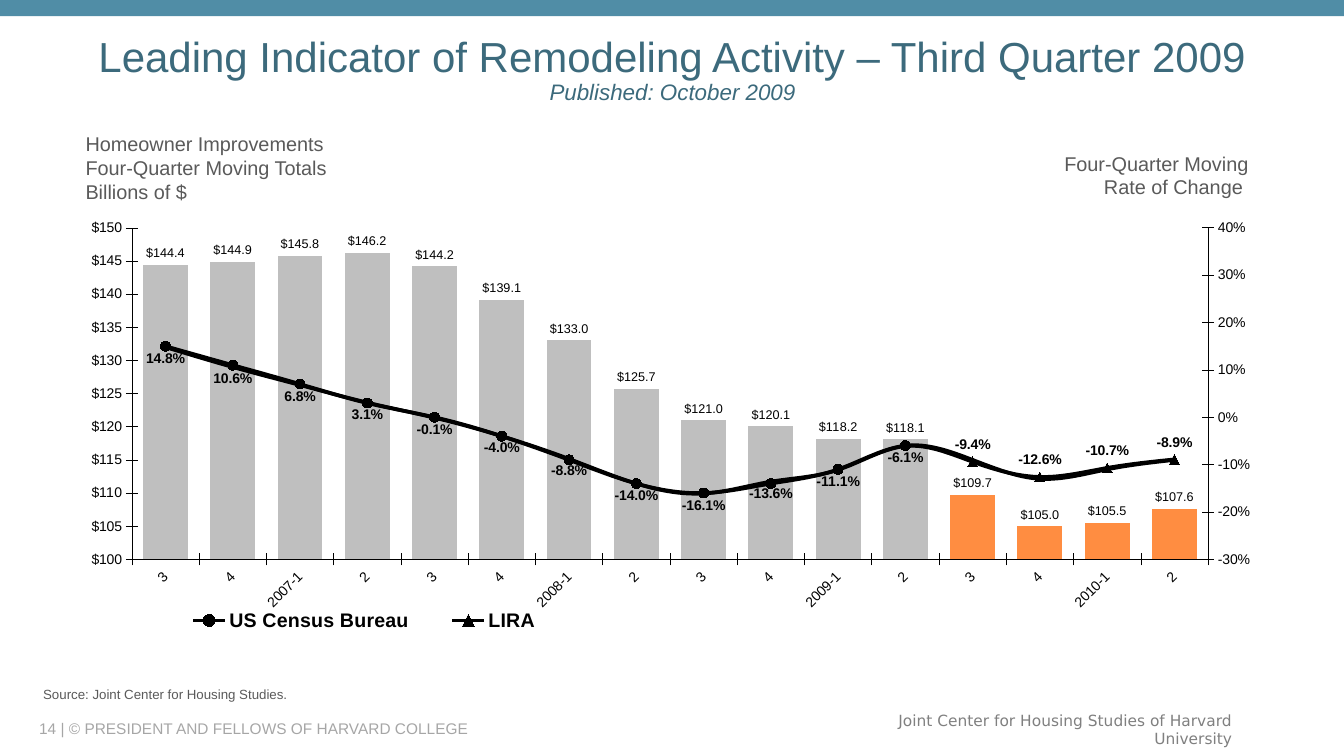
from dataclasses import dataclass

from pptx import Presentation
from pptx.chart.axis import ValueAxis
from pptx.chart.data import CategoryChartData
from pptx.dml.color import RGBColor
from pptx.enum.chart import (XL_CHART_TYPE, XL_LABEL_POSITION, XL_LEGEND_POSITION,
                             XL_MARKER_STYLE, XL_TICK_MARK)
from pptx.enum.shapes import MSO_SHAPE
from pptx.enum.text import MSO_ANCHOR, PP_ALIGN
from pptx.oxml import parse_xml
from pptx.oxml.ns import nsdecls
from pptx.util import Inches, Pt

COLUMNS = XL_CHART_TYPE.COLUMN_CLUSTERED
RECTANGLE = MSO_SHAPE.RECTANGLE
LEGEND_BOTTOM = XL_LEGEND_POSITION.BOTTOM
ABOVE, BELOW = XL_LABEL_POSITION.ABOVE, XL_LABEL_POSITION.BELOW
OUTSIDE = XL_LABEL_POSITION.OUTSIDE_END
CIRCLE, TRIANGLE, NO_MARKER = (XL_MARKER_STYLE.CIRCLE, XL_MARKER_STYLE.TRIANGLE,
                               XL_MARKER_STYLE.NONE)
CROSS, NO_TICK = XL_TICK_MARK.CROSS, XL_TICK_MARK.NONE
LEFT, CENTER, RIGHT = PP_ALIGN.LEFT, PP_ALIGN.CENTER, PP_ALIGN.RIGHT
TOP, MIDDLE = MSO_ANCHOR.TOP, MSO_ANCHOR.MIDDLE

QUARTERS = ["3", "4", "2007-1", "2", "3", "4", "2008-1", "2",
            "3", "4", "2009-1", "2", "3", "4", "2010-1", "2"]
SPENDING = [144.4, 144.9, 145.8, 146.2, 144.2, 139.1, 133.0, 125.7,
            121.0, 120.1, 118.2, 118.1, 109.7, 105.0, 105.5, 107.6]
LIRA_RATES = [0.148, 0.106, 0.068, 0.031, -0.001, -0.04, -0.088, -0.14,
              -0.161, -0.136, -0.111, -0.061, -0.094, -0.126, -0.107, -0.089]
CENSUS_RATES = [round(rate, 2) for rate in LIRA_RATES]
FIRST_FORECAST = 12


@dataclass(frozen=True)
class Theme:
    font: str = "Arial"
    footer_font: str = "DejaVu Sans"
    band: str = "508DA6"
    title: str = "3C6A7C"
    body: str = "5A5A5A"
    copyright: str = "A6A6A6"
    footer: str = "808080"
    ink: str = "000000"
    actual: str = "BFBFBF"
    forecast: str = "FF8D41"
    title_size: float = 30
    subtitle_size: float = 16
    heading_size: float = 14.2
    legend_size: float = 14
    chart_size: float = 13.2
    footer_size: float = 11
    axis_size: float = 10
    source_size: float = 9.5
    bar_label_size: float = 9


def assign(target, values):
    for name, value in values.items():
        setattr(target, name, value)


def manual_layout(x, y, w, h, inner=False):
    target = '<c:layoutTarget val="inner"/>' if inner else ""
    return parse_xml(
        f'<c:layout {nsdecls("c")}><c:manualLayout>{target}'
        '<c:xMode val="edge"/><c:yMode val="edge"/>'
        f'<c:x val="{x}"/><c:y val="{y}"/><c:w val="{w}"/><c:h val="{h}"/>'
        '</c:manualLayout></c:layout>')


class SlideBuilder:
    def __init__(self, slide, theme):
        self.slide = slide
        self.theme = theme

    def style_font(self, font, size, color=None, **extra):
        assign(font, {"name": self.theme.font, "size": Pt(size), **extra})
        font.color.rgb = RGBColor.from_string(color or self.theme.ink)

    def band(self, left, top, width, height):
        band = self.slide.shapes.add_shape(
            RECTANGLE, *map(Inches, (left, top, width, height)))
        band.shadow.inherit = False
        band.fill.solid()
        band.fill.fore_color.rgb = RGBColor.from_string(self.theme.band)
        band.line.fill.background()

    def text(self, place, lines, size, color, align=LEFT, anchor=TOP, **extra):
        frame = self.slide.shapes.add_textbox(*map(Inches, place)).text_frame
        assign(frame, {"word_wrap": True, "vertical_anchor": anchor})
        for index, line in enumerate(lines):
            paragraph = frame.add_paragraph() if index else frame.paragraphs[0]
            paragraph.alignment = align
            run = paragraph.add_run()
            run.text = line
            self.style_font(run.font, size, color, **extra)
        return frame.paragraphs[0]

    def title(self, place, heading, subtitle):
        theme = self.theme
        paragraph = self.text(place, [heading], theme.title_size, theme.title,
                              CENTER, MIDDLE)
        paragraph.line_spacing = 0.9
        paragraph.add_line_break()
        published = paragraph.add_run()
        published.text = subtitle
        self.style_font(published.font, theme.subtitle_size, theme.title, italic=True)

    def chart(self, place):
        data = CategoryChartData()
        data.categories = QUARTERS
        data.add_series("Series 1", SPENDING)
        data.add_series("US Census Bureau", CENSUS_RATES)
        data.add_series("LIRA", LIRA_RATES)
        chart = self.slide.shapes.add_chart(COLUMNS, *map(Inches, place), data).chart
        chart.has_title = False
        self.style_font(chart.font, self.theme.chart_size)
        self.style_axis(chart.category_axis)
        chart.category_axis._element.txPr.bodyPr.set("rot", "-2700000")
        self.style_axis(chart.value_axis, "\\$#,##0", 100, 150, 5)
        rate_axis = self.move_rates_to_right_axis(chart)
        self.style_axis(rate_axis, "0%", -0.3, 0.4, 0.1)
        self.style_columns(chart.plots[0])
        self.style_lines(chart.plots[1])
        self.style_legend(chart)

    def move_rates_to_right_axis(self, chart):
        """Turn the last two series into lines and return their value axis."""
        area = chart._chartSpace.chart.plotArea
        bars = area.find("c:barChart", area.nsmap)
        lines = parse_xml(
            f'<c:lineChart {nsdecls("c")}><c:grouping val="standard"/>'
            '<c:varyColors val="0"/><c:marker val="1"/>'
            '<c:axId val="5001"/><c:axId val="5002"/></c:lineChart>')
        for offset, series in enumerate(bars.xpath("c:ser")[1:]):
            for invert in series.xpath("c:invertIfNegative"):
                series.remove(invert)
            lines.insert(2 + offset, series)
        bars.addnext(lines)
        hidden_quarters = parse_xml(
            f'<c:catAx {nsdecls("c")}><c:axId val="5001"/>'
            '<c:scaling><c:orientation val="minMax"/></c:scaling>'
            '<c:delete val="1"/><c:axPos val="b"/><c:crossAx val="5002"/>'
            '<c:crosses val="autoZero"/></c:catAx>')
        rates = parse_xml(
            f'<c:valAx {nsdecls("c")}><c:axId val="5002"/>'
            '<c:scaling><c:orientation val="minMax"/></c:scaling>'
            '<c:delete val="0"/><c:axPos val="r"/><c:crossAx val="5001"/>'
            '<c:crosses val="max"/></c:valAx>')
        area.xpath("c:valAx")[-1].addnext(hidden_quarters)
        hidden_quarters.addnext(rates)
        for layout in area.xpath("c:layout"):
            area.remove(layout)
        area.insert(0, manual_layout(0.06, 0.06, 0.88, 0.76, inner=True))
        return ValueAxis(rates)

    def style_axis(self, axis, number_format=None, low=None, high=None, step=None):
        assign(axis, {"has_major_gridlines": False, "major_tick_mark": CROSS,
                      "minor_tick_mark": NO_TICK})
        self.style_font(axis.tick_labels.font, self.theme.axis_size)
        axis.format.line.width = Pt(0.33)
        axis.format.line.color.rgb = RGBColor.from_string(self.theme.ink)
        if number_format:
            assign(axis, {"minimum_scale": low, "maximum_scale": high,
                          "major_unit": step})
            assign(axis.tick_labels, {"number_format": number_format,
                                      "number_format_is_linked": False})

    def style_labels(self, labels, number_format, position, size, **extra):
        assign(labels, {"show_value": True, "number_format": number_format,
                        "number_format_is_linked": False, "position": position})
        self.style_font(labels.font, size, **extra)

    def style_columns(self, plot):
        assign(plot, {"gap_width": 50, "vary_by_categories": False})
        spending = plot.series[0]
        fills = [(spending, self.theme.actual)]
        fills += [(spending.points[index], self.theme.forecast)
                  for index in range(FIRST_FORECAST, len(QUARTERS))]
        for part, color in fills:
            part.format.fill.solid()
            part.format.fill.fore_color.rgb = RGBColor.from_string(color)
        self.style_labels(spending.data_labels, "\\$#,##0.0", OUTSIDE,
                          self.theme.bar_label_size)

    def style_lines(self, plot):
        ink = RGBColor.from_string(self.theme.ink)
        actual, forecast = range(FIRST_FORECAST), range(FIRST_FORECAST, len(QUARTERS))
        census, lira = plot.series
        for series, marker, unmarked in ((census, CIRCLE, forecast),
                                         (lira, TRIANGLE, actual)):
            series.smooth = True
            series.format.line.width = Pt(2.64)
            series.format.line.color.rgb = ink
            assign(series.marker, {"style": marker, "size": 7})
            series.marker.format.fill.solid()
            series.marker.format.fill.fore_color.rgb = ink
            series.marker.format.line.color.rgb = ink
            for index in unmarked:
                series.points[index].marker.style = NO_MARKER
        size = self.theme.axis_size
        self.style_labels(lira.data_labels, "0.0%", BELOW, size, bold=True)
        for index in forecast:
            label = lira.points[index].data_label
            self.style_font(label.font, size, bold=True)
            label.position = ABOVE
        for index_element in lira.data_labels._element.xpath("c:dLbl/c:idx"):
            index_element.addnext(parse_xml(
                f'<c:numFmt {nsdecls("c")} formatCode="0.0%" sourceLinked="0"/>'))

    def style_legend(self, chart):
        chart.has_legend = True
        legend = chart.legend
        assign(legend, {"position": LEGEND_BOTTOM, "include_in_layout": False})
        self.style_font(legend.font, self.theme.legend_size, bold=True)
        for layout in legend._element.xpath("c:layout"):
            legend._element.remove(layout)
        hidden_entry = parse_xml(f'<c:legendEntry {nsdecls("c")}><c:idx val="0"/>'
                                 '<c:delete val="1"/></c:legendEntry>')
        legend._element.xpath("c:legendPos")[0].addnext(hidden_entry)
        hidden_entry.addnext(manual_layout(0.08, 0.92, 0.34, 0.08))


def main():
    deck = Presentation()
    assign(deck, {"slide_width": Inches(13.33), "slide_height": Inches(7.5)})
    theme = Theme()
    page = SlideBuilder(deck.slides.add_slide(deck.slide_layouts[6]), theme)
    page.text((0.29, 7.13, 7.92, 0.2), ["14 | © PRESIDENT AND FELLOWS OF HARVARD COLLEGE"],
              theme.footer_size, theme.copyright, anchor=MIDDLE)
    page.text((8.42, 7.09, 3.9, 0.29),
              ["Joint Center for Housing Studies of Harvard University"],
              theme.footer_size, theme.footer, RIGHT, MIDDLE, name=theme.footer_font)
    page.band(0, 0, 13.33, 0.16)
    page.title((0.56, 0.33, 12.22, 0.75),
               "Leading Indicator of Remodeling Activity – Third Quarter 2009",
               "Published: October 2009")
    page.text((0.75, 1.26, 3.83, 0.82),
              ["Homeowner Improvements", "Four-Quarter Moving Totals", "Billions of $"],
              theme.heading_size, theme.body)
    page.text((8.42, 1.45, 4.06, 0.58), ["Four-Quarter Moving", "Rate of Change "],
              theme.heading_size, theme.body, RIGHT)
    page.chart((0.58, 2, 12.13, 4.33))
    page.text((0.33, 6.76, 10.07, 0.26), ["Source: Joint Center for Housing Studies."],
              theme.source_size, theme.body)
    deck.save("out.pptx")


if __name__ == "__main__":
    main()
